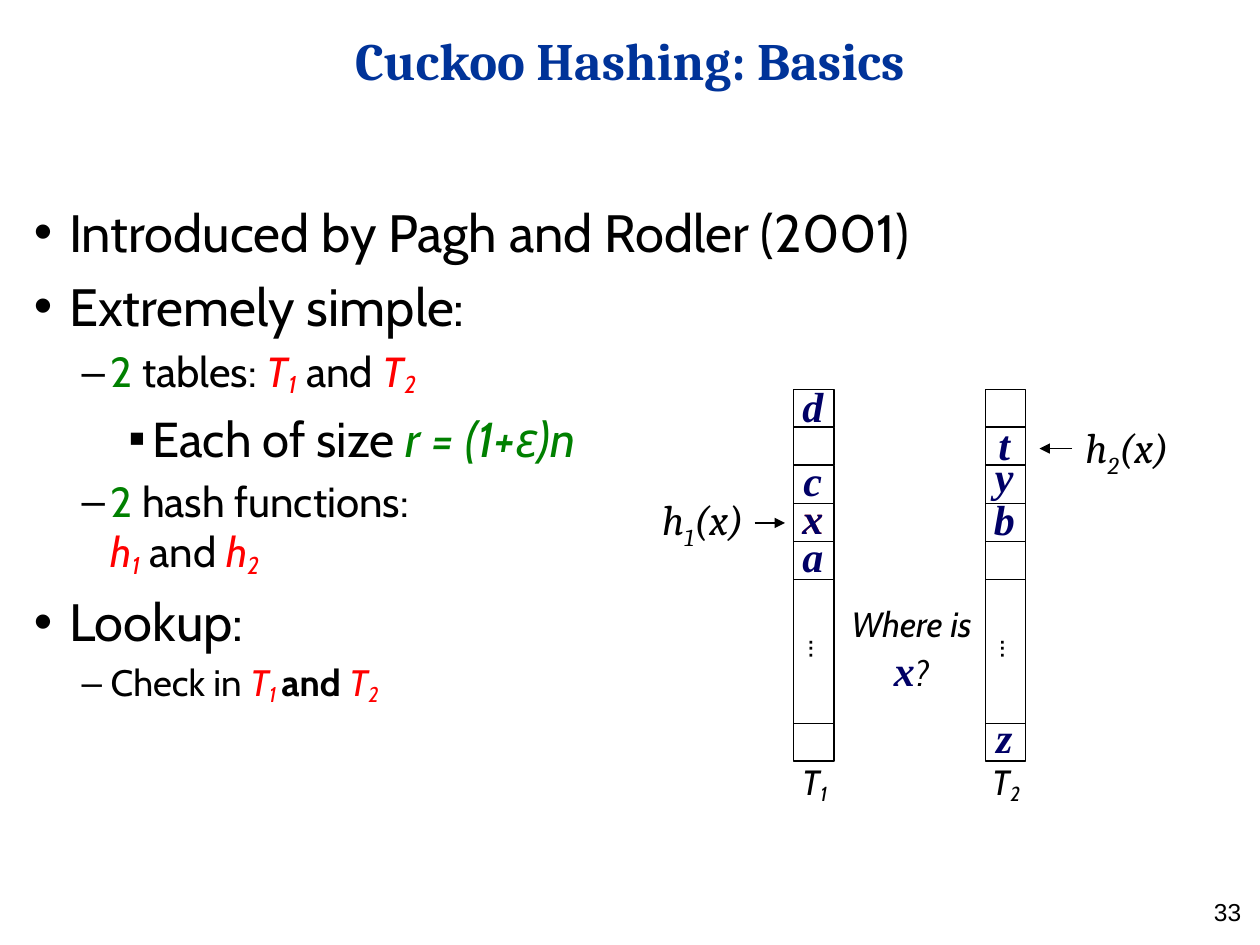
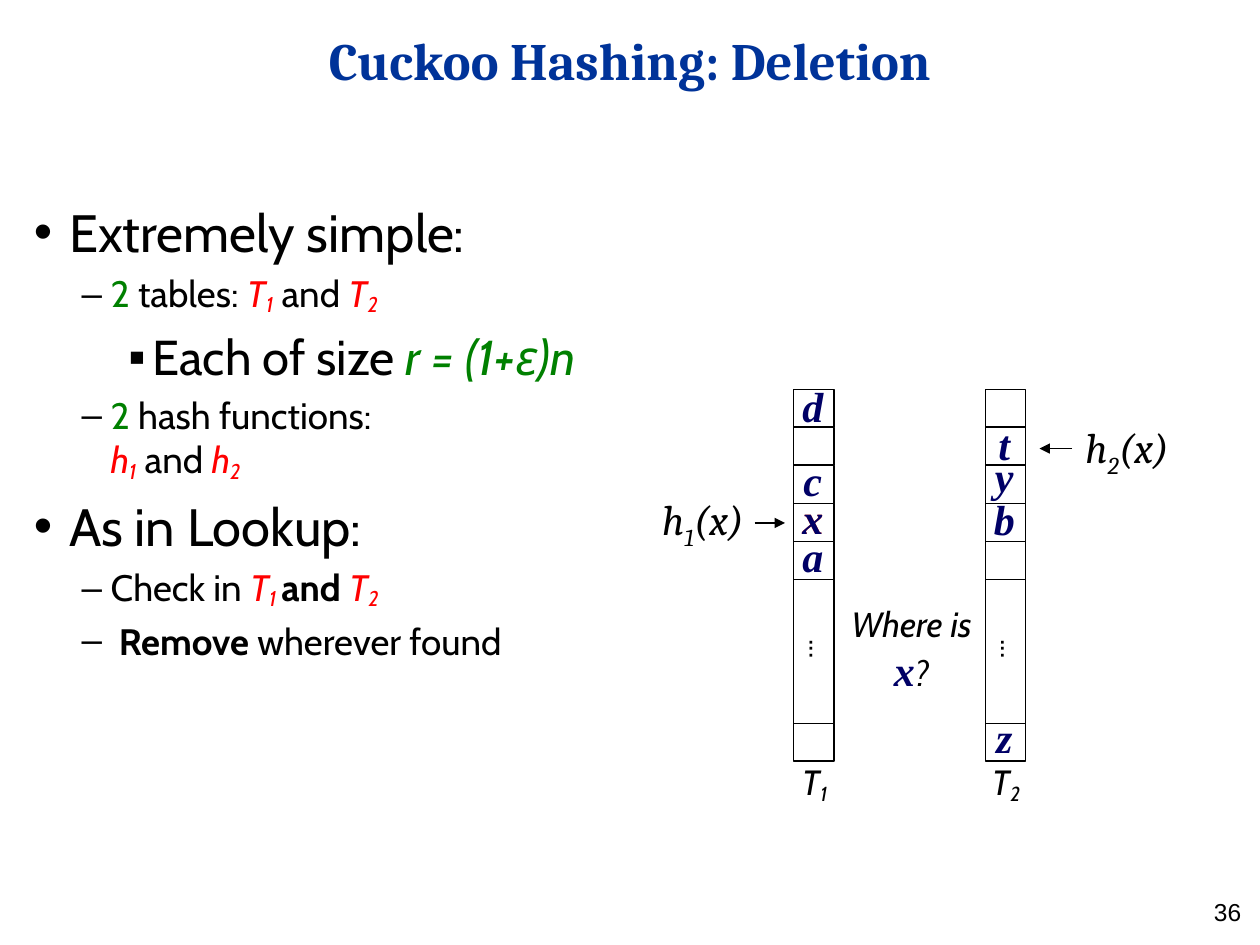
"""Builds two slides on cuckoo hashing: basics and deletion."""
from lxml import etree
from pptx import Presentation
from pptx.dml.color import RGBColor
from pptx.enum import shapes, text
from pptx.oxml import ns
from pptx.util import Inches, Pt

BLACK = RGBColor(0x00, 0x00, 0x00)
BLUE = RGBColor(0x00, 0x33, 0x99)
NAVY = RGBColor(0x00, 0x00, 0x66)
GREEN = RGBColor(0x00, 0x80, 0x00)
RED = RGBColor(0xFF, 0x00, 0x00)
FLAME = RGBColor(0xFF, 0x33, 0x00)
CABIN, SERIF, TIMES = "Cabin", "Cambria", "Times New Roman"

LEFT, CENTER, RIGHT = text.PP_ALIGN.LEFT, text.PP_ALIGN.CENTER, text.PP_ALIGN.RIGHT
LEVELS = [("•", 0.28, -0.28), ("–", 0.61, -0.23), ("▪", 0.94, -0.19)]

TOP, SPLIT, LAST, HIGH, WIDE = 3.09, 4.6, 5.74, 0.3, 0.32
STEP = (SPLIT - TOP) / 5
TABLES = [
    ("1", 6.3, [("d", 2.97), ("c", 3.56), ("x", 3.86), ("a", 4.16)]),
    ("2", 7.82, [("t", 3.27), ("y", 3.53), ("b", 3.87), ("z", 5.6)]),
]


def run(words, color=BLACK, **look):
    return words, dict(look, color=color)


def var(name, low, gap=""):
    return [run(name, RED, ital=True), run(low + gap, RED, ital=True, base=-15)]


def pair(name):
    return var(name, "1") + [run(" and ")] + var(name, "2")


def setup(size):
    return [
        (0, 30, [run("Extremely simple:")]),
        (1, size, [run("2", GREEN), run(" tables: ")] + pair("T")),
        (2, 28, [run("Each of size "), run("r = (1+ε)n", GREEN, ital=True)]),
        (1, size, [run("2", GREEN), run(" hash functions: \n")] + pair("h")),
    ]


CHECK = (1, 21, [run("Check in ")] + var("T", "1", " ")
         + [run("and ", bold=True)] + var("T", "2"))
BASICS = ([(0, 30, [run("Introduced by Pagh and Rodler (2001)")])] + setup(24)
          + [(0, 30, [run("Lookup:")]), CHECK])
DELETE = setup(21) + [
    (0, 30, [run("As in Lookup:")]), CHECK,
    (1, 21, [run(" "), run("Remove", bold=True), run(" wherever found")])]


class Deck:
    """Holds the style and the slide being drawn."""

    def __init__(self):
        self.show = Presentation()
        self.show.slide_width, self.show.slide_height = Inches(10), Inches(7.5)

    def start(self, title, number):
        slide = self.show.slides.add_slide(self.show.slide_layouts[5])
        self.page = self.into = slide.shapes
        head = self.page.title
        head.left, head.top, head.width, head.height = map(Inches, (0.5, 0.11, 9, 0.72))
        head.text_frame.vertical_anchor = text.MSO_ANCHOR.MIDDLE
        self.fill(head.text_frame.paragraphs[0],
                  [run(title, BLUE, bold=True)], 30, SERIF, CENTER)
        frame = self.box((7.62, 7.07, 2.33, 0.28))
        self.fill(frame.paragraphs[0], [run(number)], 14, "Arial", RIGHT)

    def box(self, at, wrap=True, turn=0):
        shape = self.into.add_textbox(*map(Inches, at))
        shape.rotation = turn
        shape.text_frame.word_wrap = wrap
        return shape.text_frame

    def fill(self, para, runs, size, face, align=LEFT):
        para.alignment = align
        for words, look in runs:
            piece = para.add_run()
            piece.text = words.rstrip("\n")
            font = piece.font
            font.name, font.size = look.get("face", face), Pt(look.get("size", size))
            font.bold, font.italic = look.get("bold", False), look.get("ital", False)
            font.color.rgb = look["color"]
            if "base" in look:
                piece._r.get_or_add_rPr().set("baseline", str(look["base"] * 1000))
            if words.endswith("\n"):
                para.add_line_break()

    def space(self, para, share):
        props = para._p.get_or_add_pPr()
        room = etree.SubElement(props, ns.qn("a:spcBef"))
        etree.SubElement(room, ns.qn("a:spcPct")).set("val", str(share * 1000))
        return props

    def bullet(self, para, level):
        mark, left, hang = LEVELS[level]
        props = self.space(para, 20)
        props.set("marL", str(Inches(left)))
        props.set("indent", str(Inches(hang)))
        color = etree.SubElement(props, ns.qn("a:buClr"))
        etree.SubElement(color, ns.qn("a:srgbClr")).set("val", str(BLACK))
        etree.SubElement(props, ns.qn("a:buFont")).set("typeface", "Arial")
        etree.SubElement(props, ns.qn("a:buChar")).set("char", mark)

    def body(self, items):
        frame = self.box((0.17, 1.54, 7.24, 4.76))
        for i, (level, size, runs) in enumerate(items):
            para = frame.add_paragraph() if i else frame.paragraphs[0]
            para.level = level
            self.bullet(para, level)
            self.fill(para, runs, size, CABIN)

    def label(self, at, runs, size, face, wrap=False, turn=0):
        frame = self.box(at, wrap, turn)
        frame.auto_size = text.MSO_AUTO_SIZE.SHAPE_TO_FIT_TEXT
        self.space(frame.paragraphs[0], 50)
        self.fill(frame.paragraphs[0], runs, size, face, CENTER)

    def cell(self, left, top, high=HIGH):
        rect = self.into.add_shape(shapes.MSO_SHAPE.RECTANGLE,
                                   *map(Inches, (left, top, WIDE, high)))
        rect.shadow.inherit = False
        rect.fill.background()
        rect.line.color.rgb, rect.line.width = BLACK, Pt(0.75)

    def arrow(self, start, end, top):
        link = self.page.add_connector(shapes.MSO_CONNECTOR.STRAIGHT,
                                       *map(Inches, (start, top, end, top)))
        link.line.color.rgb, link.line.width = BLACK, Pt(0.75)
        props = link._element.spPr
        tip = etree.SubElement(props.find(ns.qn("a:ln")), ns.qn("a:tailEnd"))
        tip.set("type", "triangle")
        etree.SubElement(props, ns.qn("a:effectLst"))

    def table(self, name, left):
        self.into = self.page.add_group_shape().shapes
        for row in range(5):
            self.cell(left, TOP + row * STEP)
        self.cell(left, LAST)
        self.cell(left, SPLIT, LAST - SPLIT)
        self.label((left + 0.01, 4.95, 0.43, 0.4), [run("...")], 18, CABIN, turn=90)
        self.label((left - 0.06, 5.99, 0.45, 0.43),
                   [run("T", ital=True), run(name, ital=True, base=-15)], 20, CABIN)
        self.into = self.page

    def hash(self, name, at):
        self.label(at, [run("h", ital=True), run(name, ital=True, base=-25),
                        run("(x)", ital=True)], 24, SERIF)

    def key(self, name, left, top, color=NAVY):
        self.label((left - 0.03, top, 0.36, 0.5),
                   [run(name, color, bold=True, ital=True)], 24, TIMES)

    def scene(self):
        for name, left, _ in TABLES:
            self.table(name, left)
        self.hash("1", (5.11, 3.87, 0.94, 0.5))
        self.hash("2", (8.44, 3.3, 1.01, 0.5))
        self.arrow(5.99, 6.23, 4.15)
        self.arrow(8.51, 8.25, 3.56)
        self.key("x", 6.3, 3.86, FLAME)
        for _, left, keys in TABLES:
            for name, top in keys:
                self.key(name, left, top)
        ask = [run("Where is ", ital=True),
               run("x", NAVY, bold=True, ital=True, size=24, face=TIMES),
               run("?", ital=True)]
        self.label((6.63, 4.73, 1.21, 0.83), ask, 20, CABIN, wrap=True)


def main():
    deck = Deck()
    for title, number, items in [("Basics", "33", BASICS), ("Deletion", "36", DELETE)]:
        deck.start("Cuckoo Hashing: " + title, number)
        deck.body(items)
        deck.scene()
    deck.show.save("out.pptx")


if __name__ == "__main__":
    main()
